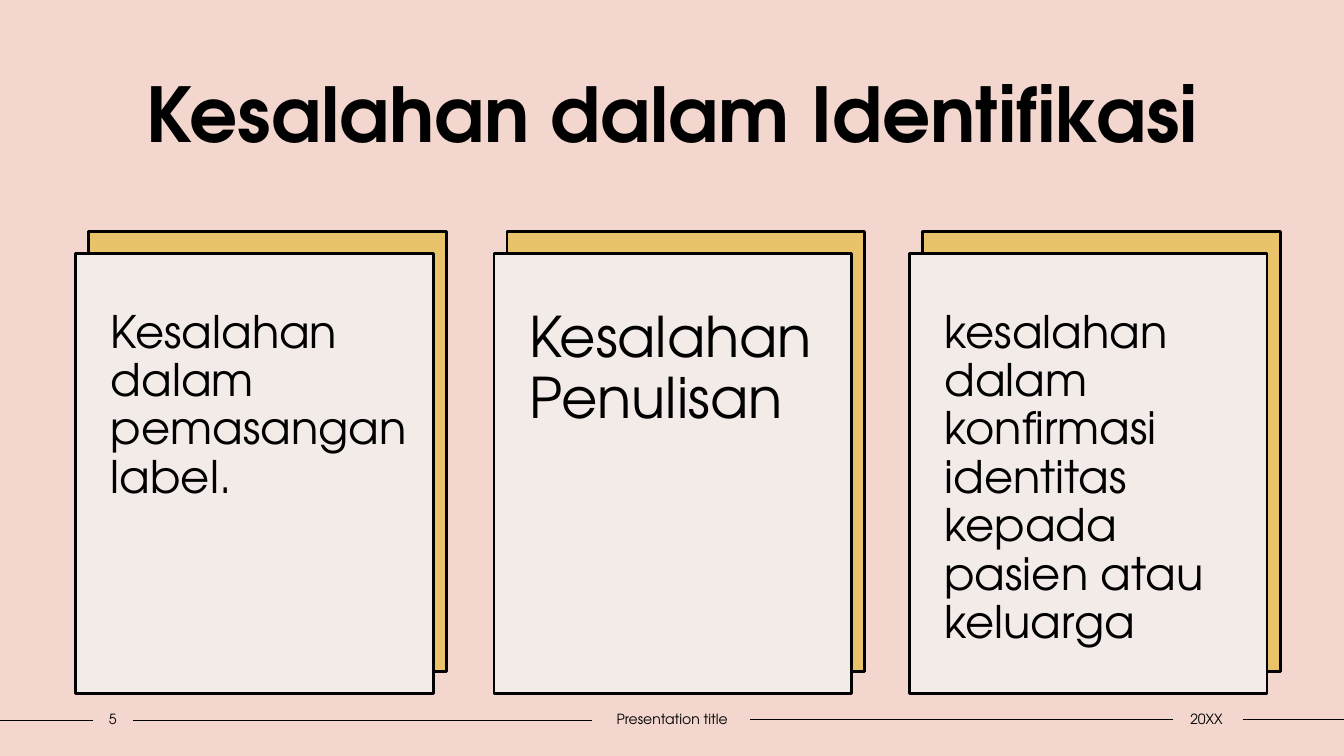
import pptx
import pptx.dml.color
import pptx.enum.shapes
import pptx.enum.text
import pptx.oxml.ns
import pptx.util
from lxml import etree

Pt = pptx.util.Pt
ALIGN = pptx.enum.text.PP_ALIGN
ANCHOR = pptx.enum.text.MSO_ANCHOR

FONT = "TeX Gyre Adventor"
BLACK, PINK, GOLD, CREAM = "000000", "F3D6CD", "E9C369", "F3EBE8"

CARD_TOP, CARD_WIDTH, CARD_HEIGHT = 181.4, 255.6, 313.9
BACK_SHIFT_X, BACK_SHIFT_Y = 9.4, -15.8
CARDS = [
    (54, "Kesalahan dalam pemasangan label.", 32),
    (352.8, "Kesalahan Penulisan", 40),
    (649.4, "kesalahan dalam konfirmasi identitas kepada pasien atau keluarga", 32),
]
FOOTER_LABELS = [(66.2, 28.8, "5"), (422.6, 115.2, "Presentation title"), (836.6, 50.4, "20XX")]
FOOTER_LINES = [(0, 66.2, 10.8), (95, 422.6, 10.8), (535.7, 838.1, 10.1), (887.8, 960, 10.1)]


def color(hex_string):
    return pptx.dml.color.RGBColor.from_string(hex_string)


def write_text(shape, text, size, bold=False, align=ALIGN.LEFT, anchor=ANCHOR.TOP,
               insets=(7.2, 3.6, 7.2, 3.6), line_spacing=None, space_before=0):
    """Fill a shape with one paragraph; insets run left, top, right, bottom."""
    frame = shape.text_frame
    frame.word_wrap = True
    frame.vertical_anchor = anchor
    frame.margin_left, frame.margin_top, frame.margin_right, frame.margin_bottom = map(Pt, insets)
    paragraph = frame.paragraphs[0]
    paragraph.alignment = align
    paragraph.space_before = Pt(space_before)
    paragraph.line_spacing = line_spacing
    run = paragraph.add_run()
    run.text = text
    run.font.name = FONT
    run.font.size = Pt(size)
    run.font.bold = bold
    run.font.color.rgb = color(BLACK)


def add_text(slide, box, text, **text_format):
    write_text(slide.shapes.add_textbox(*map(Pt, box)), text, **text_format)


def add_panel(slide, box, fill):
    panel = slide.shapes.add_shape(pptx.enum.shapes.MSO_SHAPE.RECTANGLE, *map(Pt, box))
    panel.shadow.inherit = False
    panel.fill.solid()
    panel.fill.fore_color.rgb = color(fill)
    panel.line.color.rgb = color(BLACK)
    panel.line.width = Pt(2)
    return panel


def add_rule(slide, start, end, y):
    rule = slide.shapes.add_connector(
        pptx.enum.shapes.MSO_CONNECTOR.STRAIGHT, Pt(start), Pt(y), Pt(end), Pt(y))
    rule.line.color.rgb = color(BLACK)
    rule.line.width = Pt(1)
    properties = rule._element.find(pptx.oxml.ns.qn("p:spPr"))
    etree.SubElement(properties, pptx.oxml.ns.qn("a:effectLst"))


def add_card(slide, box, text, size):
    """Place a cream text card over a shifted gold panel."""
    left, top, width, height = box
    add_panel(slide, (left + BACK_SHIFT_X, top + BACK_SHIFT_Y, width, height), GOLD)
    write_text(add_panel(slide, box, CREAM), text, size=size,
               insets=(25.2, 39.6, 7.2, 3.6), line_spacing=0.9, space_before=10)


def add_footer(slide, box):
    left, top, _, height = box
    for start, end, drop in FOOTER_LINES:
        add_rule(slide, left + start, left + end, top + drop)
    for offset, width, text in FOOTER_LABELS:
        add_text(slide, (left + offset, top, width, height), text, size=10,
                 align=ALIGN.CENTER, anchor=ANCHOR.MIDDLE, insets=(0, 3.6, 0, 3.6))


def main():
    presentation = pptx.Presentation()
    presentation.slide_width, presentation.slide_height = Pt(960), Pt(540)
    slide = presentation.slides.add_slide(presentation.slide_layouts[6])
    slide.background.fill.solid()
    slide.background.fill.fore_color.rgb = color(PINK)

    add_text(slide, (90, 44.6, 780.5, 75.6), "Kesalahan dalam Identifikasi",
             size=54, bold=True, align=ALIGN.CENTER)
    for left, text, size in CARDS:
        add_card(slide, (left, CARD_TOP, CARD_WIDTH, CARD_HEIGHT), text, size)
    add_footer(slide, (0, 504, 960, 19.4))
    presentation.save("out.pptx")


if __name__ == "__main__":
    main()
